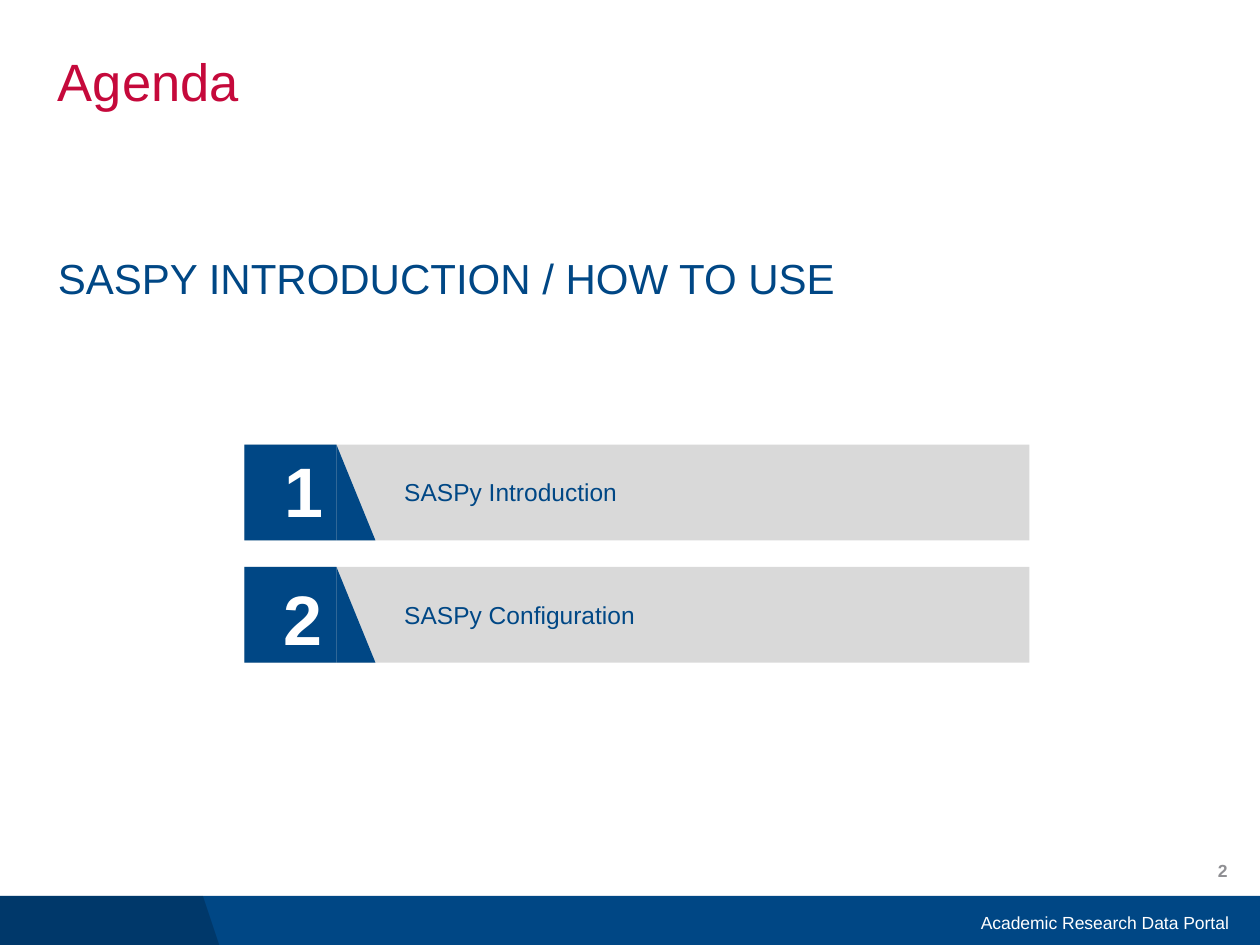
from lxml import etree
from pptx import Presentation
from pptx.dml.color import RGBColor
from pptx.enum import shapes as es, text as et
from pptx.oxml import ns
from pptx.util import Inches, Pt

NAVY, GREY, RED, WHITE = "004785", "D9D9D9", "C5093B", "FFFFFF"
RECT = es.MSO_SHAPE.RECTANGLE
TRIANGLE = es.MSO_SHAPE.ISOSCELES_TRIANGLE


def color(code):
    return RGBColor.from_string(code)


def paint(shape, code):
    shape.shadow.inherit = False
    shape.fill.solid()
    shape.fill.fore_color.rgb = color(code)
    shape.line.fill.background()


def block(parent, kind, x, y, w, h, code):
    shape = parent.add_shape(kind, Inches(x), Inches(y), Inches(w), Inches(h))
    paint(shape, code)
    return shape


def write(parent, words, x, y, w, h, size, code, bold=False, align="LEFT",
          anchor="TOP", pads=(0.1, 0.05, 0.1, 0.05), spacing=None):
    """Add a text box; pads are left, top, right, bottom in inches."""
    box = parent.add_textbox(Inches(x), Inches(y), Inches(w), Inches(h))
    frame = box.text_frame
    frame.word_wrap = True
    frame.vertical_anchor = et.MSO_ANCHOR[anchor]
    (frame.margin_left, frame.margin_top,
     frame.margin_right, frame.margin_bottom) = map(Inches, pads)
    para = frame.paragraphs[0]
    para.alignment = et.PP_ALIGN[align]
    para.line_spacing = spacing
    run = para.add_run()
    run.text = words
    run.font.name = "Arial"
    run.font.size = Pt(size)
    run.font.bold = bold
    run.font.color.rgb = color(code)


def footer(parent, x, y, w, h):
    block(parent, RECT, x, y, w, h, NAVY)
    pen = parent.build_freeform(Inches(x), Inches(y))
    pen.add_line_segments([(Inches(x + dx), Inches(y + dy)) for dx, dy in
                           ((1.61, 0), (1.75, h), (0, h))], close=True)
    shade = pen.convert_to_shape()
    paint(shade, "000000")
    tint = shade.fill._xPr.find(".//" + ns.qn("a:srgbClr"))
    etree.SubElement(tint, ns.qn("a:alpha"), val="20000")
    write(parent, "Academic Research Data Portal", x + 6.47, y + 0.01, 3.38, 0.4,
          10, WHITE, align="RIGHT", anchor="MIDDLE")
    write(parent, "2", x + 7.59, y - 0.4, 2.25, 0.4,
          10, "8F8F93", bold=True, align="RIGHT", anchor="MIDDLE")


def heading(parent, x, y, w):
    write(parent, "Agenda", x, y, w, 0.56, 30, RED,
          pads=(0, 0.05, 0, 0.05), spacing=0.9)
    write(parent, "SASPY INTRODUCTION / HOW TO USE", x, y + 1.05, w, 0.98,
          24, NAVY, anchor="BOTTOM", pads=(0, 0.05, 0, 0.03))


def item(parent, number, label, x, y, w, h, shift):
    """Draw one agenda bar; shift moves its number from the bar's corner."""
    group = parent.add_group_shape().shapes
    block(group, RECT, x, y, w, h, GREY)
    block(group, RECT, x, y, 0.73, h, NAVY)
    wedge = block(group, TRIANGLE, x + 0.73, y, 0.31, h, NAVY)
    wedge.adjustments[0] = 0
    dx, dy = shift
    write(group, number, x + dx, y + dy, 0.59, 0.77, 40, WHITE, bold=True)
    write(group, label, x + 1.17, y + 0.21, 3.89, 0.34, 14, NAVY)


def agenda(parent, x, y, w):
    rows = (("SASPy Introduction", (0.22, -0.03)),
            ("SASPy Configuration", (0.21, 0.02)))
    for i, (label, shift) in enumerate(rows):
        item(parent, str(i + 1), label, x, y + 0.97 * i, w, 0.76, shift)


def main():
    deck = Presentation()
    deck.slide_width, deck.slide_height = Inches(10), Inches(7.5)
    parts = deck.slides.add_slide(deck.slide_layouts[6]).shapes
    footer(parts, 0, 7.11, 10, 0.42)
    heading(parts, 0.46, 0.4, 8.62)
    agenda(parts, 1.94, 3.53, 6.23)
    deck.save("out.pptx")


if __name__ == "__main__":
    main()
